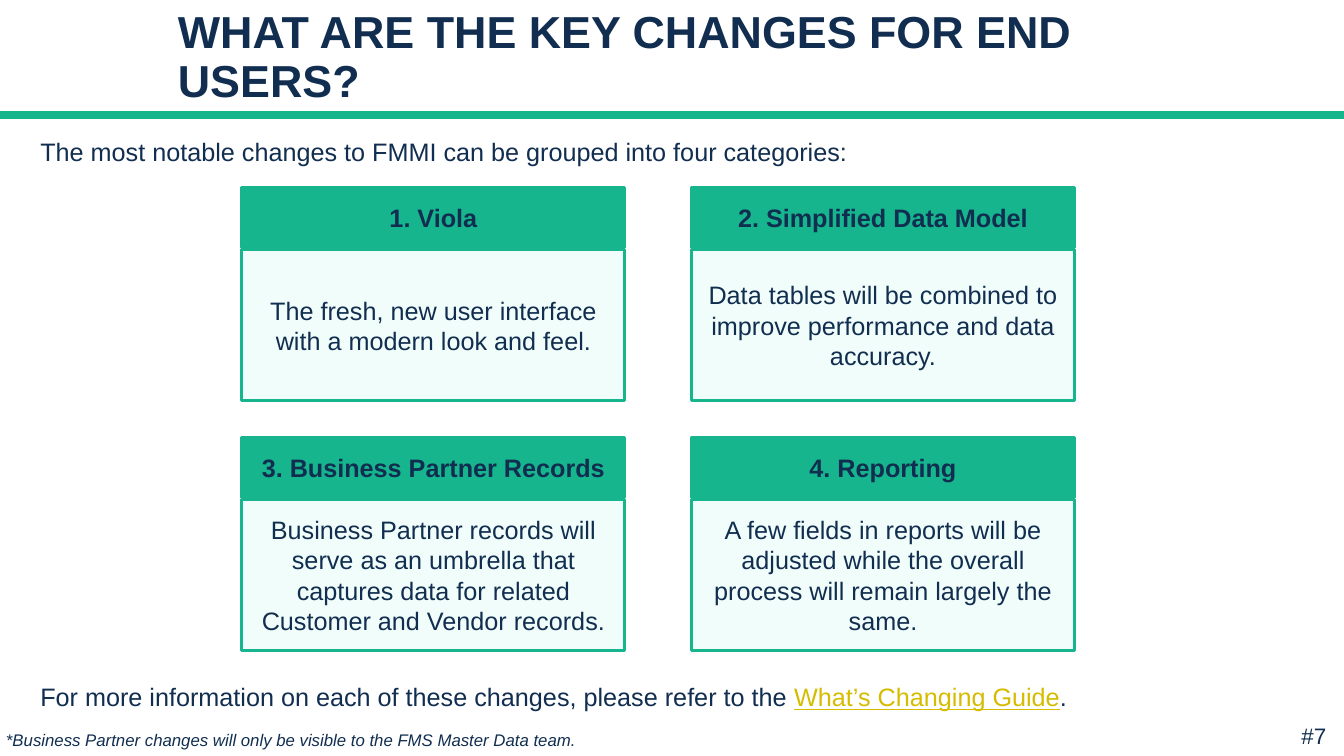
from dataclasses import dataclass, field
from typing import Any

from lxml import etree
from pptx import Presentation
from pptx.dml.color import RGBColor
from pptx.enum.shapes import MSO_CONNECTOR, MSO_SHAPE
from pptx.enum.text import MSO_ANCHOR, PP_ALIGN
from pptx.oxml.ns import qn
from pptx.util import Inches, Pt

RECT = MSO_SHAPE.RECTANGLE
LINE = MSO_CONNECTOR.STRAIGHT
MID, LOW = MSO_ANCHOR.MIDDLE, MSO_ANCHOR.BOTTOM
MIDDLE = PP_ALIGN.CENTER

HUE = {"navy": "112E50", "green": "16B58E", "mint": "F1FDFA", "gold": "D6BC00"}
WIDE, HIGH = Inches(13.33), Inches(7.5)
COLS, ROWS = 100, 100
FLUSH = dict.fromkeys(
    ("margin_left", "margin_top", "margin_right", "margin_bottom"), 0)
GAPS = {"space_after": Pt(6)}


@dataclass
class Span:
    text: str
    hue: str = "navy"
    font: dict[str, Any] = field(default_factory=dict)


@dataclass
class Label:
    area: tuple[float, float, float, float]
    spans: list[Span]
    size: int = 18
    frame: dict[str, Any] = field(default_factory=dict)
    para: dict[str, Any] = field(default_factory=dict)


@dataclass
class Card:
    head: str
    body: str


LABELS = [
    Label((12.5, 4.67, 75, 10.13),
          [Span("WHAT ARE THE KEY CHANGES FOR END USERS?", font={"bold": True})],
          32, {"vertical_anchor": LOW}, {"line_spacing": 0.9}),
    Label((3, 18.53, 78.4, 10.13),
          [Span("The most notable changes to FMMI can be grouped into four categories:")],
          frame=FLUSH, para=GAPS | {"line_spacing": 0.9}),
    Label((3, 90.13, 81.75, 5.33),
          [Span("For more information on each of these changes, please refer to the "),
           Span("What’s Changing Guide", "gold", {"underline": True}),
           Span(".")],
          frame=FLUSH, para=GAPS),
    Label((0, 95.87, 84.7, 4),
          [Span("*Business Partner changes will only be visible to the FMS Master Data team.",
                font={"italic": True})],
          12, {"margin_left": Inches(0.06)}, GAPS),
    Label((95.5, 94.8, 4.5, 4.93), [Span("#7")], 16, para={"alignment": MIDDLE}),
]

CARDS = [
    Card("1. Viola", "The fresh, new user interface with a modern look and feel."),
    Card("2. Simplified Data Model",
         "Data tables will be combined to improve performance and data accuracy."),
    Card("3. Business Partner Records",
         "Business Partner records will serve as an umbrella that captures data "
         "for related Customer and Vendor records."),
    Card("4. Reporting",
         "A few fields in reports will be adjusted while the overall process "
         "will remain largely the same."),
]
LEFT, TOP = 18, 24.8
STEP_X, STEP_Y = 33.45, 33.07
CARD_W, HEAD_H, BODY_H, BODY_Y = 28.5, 8, 20, 8.2


def place(area: tuple[float, float, float, float]) -> list[int]:
    units = (WIDE / COLS, HIGH / ROWS) * 2
    return [round(part * unit) for part, unit in zip(area, units)]


def tint(name: str) -> RGBColor:
    return RGBColor.from_string(HUE[name])


def apply(target: Any, values: dict[str, Any]) -> None:
    for name, value in values.items():
        setattr(target, name, value)


def write(shape: Any, label: Label) -> None:
    frame = shape.text_frame
    apply(frame, {"word_wrap": True} | label.frame)
    para = frame.paragraphs[0]
    apply(para, label.para)
    for span in label.spans:
        run = para.add_run()
        run.text = span.text
        apply(run.font, {"name": "Arial", "size": Pt(label.size)} | span.font)
        run.font.color.rgb = tint(span.hue)


def draw_label(slide: Any, label: Label) -> None:
    write(slide.shapes.add_textbox(*place(label.area)), label)


def draw_box(slide: Any, label: Label, fill: str) -> None:
    box = slide.shapes.add_shape(RECT, *place(label.area))
    box.shadow.inherit = False
    box.fill.solid()
    box.fill.fore_color.rgb = tint(fill)
    box.line.color.rgb = tint("green")
    box.line.width = Pt(2.25)
    write(box, label)


def draw_card(slide: Any, card: Card, col: int, row: int) -> None:
    x, y = LEFT + col * STEP_X, TOP + row * STEP_Y
    parts = [
        (card.head, y, HEAD_H, "green", True),
        (card.body, y + BODY_Y, BODY_H, "mint", False),
    ]
    for text, top, tall, fill, bold in parts:
        label = Label((x, top, CARD_W, tall), [Span(text, font={"bold": bold})],
                      frame={"vertical_anchor": MID}, para={"alignment": MIDDLE})
        draw_box(slide, label, fill)


def draw_rule(slide: Any) -> None:
    rule = slide.shapes.add_connector(LINE, *place((0, 15.2, COLS, 15.2)))
    rule.line.color.rgb = tint("green")
    rule.line.width = Pt(6)
    etree.SubElement(rule._element.spPr, qn("a:effectLst"))


def main() -> None:
    deck = Presentation()
    apply(deck, {"slide_width": WIDE, "slide_height": HIGH})
    slide = deck.slides.add_slide(deck.slide_layouts[6])
    draw_rule(slide)
    for label in LABELS:
        draw_label(slide, label)
    for index, card in enumerate(CARDS):
        row, col = divmod(index, 2)
        draw_card(slide, card, col, row)
    deck.save("out.pptx")


if __name__ == "__main__":
    main()
